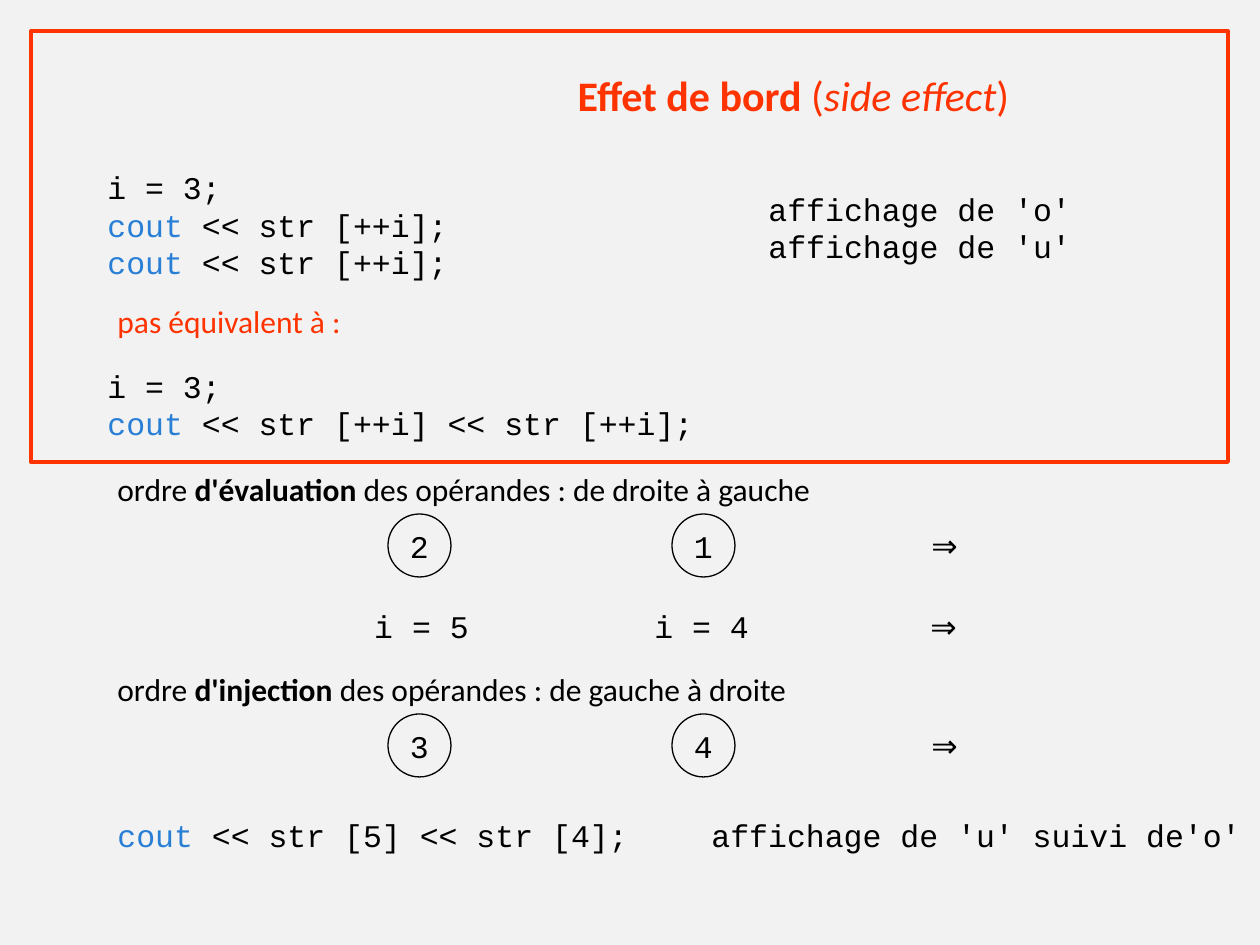
import pptx
import pptx.dml.color
import pptx.enum.shapes
import pptx.enum.text
import pptx.util

PX = 914400 / 126
BLACK = pptx.dml.color.RGBColor(0x00, 0x00, 0x00)
BLUE = pptx.dml.color.RGBColor(0x29, 0x7F, 0xD5)
RED = pptx.dml.color.RGBColor(0xFF, 0x33, 0x00)
PALE = pptx.dml.color.RGBColor(0xF2, 0xF2, 0xF2)
CODE = "Courier New"
PROSE = "Calibri"
LEFT = pptx.enum.text.PP_ALIGN.LEFT
CENTER = pptx.enum.text.PP_ALIGN.CENTER
SHAPES = pptx.enum.shapes.MSO_SHAPE

deck = pptx.Presentation()
deck.slide_width = round(1260 * PX)
deck.slide_height = round(945 * PX)
page = deck.slides.add_slide(deck.slide_layouts[6])
page.background.fill.solid()
page.background.fill.fore_color.rgb = PALE


def write(box, lines, font, align=LEFT, size=18):
    frame = box.text_frame
    frame.word_wrap = False
    frame.vertical_anchor = pptx.enum.text.MSO_ANCHOR.MIDDLE
    for number, line in enumerate(lines):
        para = frame.add_paragraph() if number else frame.paragraphs[0]
        para.alignment = align
        for text, color, style in line:
            span = para.add_run()
            span.text = text
            span.font.name = font
            span.font.size = pptx.util.Pt(size)
            span.font.color.rgb = color
            span.font.bold = style == "bold"
            span.font.italic = style == "italic"


def outline(kind, left, top, width, height, color, weight):
    shape = page.shapes.add_shape(kind, *(round(n * PX) for n in (left, top, width, height)))
    shape.shadow.inherit = False
    shape.fill.background()
    shape.line.color.rgb = color
    shape.line.width = pptx.util.Pt(weight)
    return shape


assign = [("i = 3;", BLACK, "")]
print_next = [("cout", BLUE, ""), (" << str [++i];", BLACK, "")]
print_both = [("cout", BLUE, ""), (" << str [++i] << str [++i];", BLACK, "")]
print_result = [("cout", BLUE, ""), (" << str [5] << str [4];", BLACK, "")]
evaluation = [("ordre ", BLACK, ""), ("d'évaluation", BLACK, "bold"),
              (" des opérandes : de droite à gauche", BLACK, "")]
injection = [("ordre ", BLACK, ""), ("d'injection", BLACK, "bold"),
             (" des opérandes : de gauche à droite", BLACK, "")]
title = [("Effet de bord", RED, "bold"), (" (", RED, ""),
         ("side effect", RED, "italic"), (")", RED, "")]
show_o = [("affichage de 'o'", BLACK, "")]
show_u = [("affichage de 'u'", BLACK, "")]
show_both = [("affichage de 'u' suivi de'o'", BLACK, "")]
arrow = [("⇒", BLACK, "")]

texts = [
    (554, 63, 479, 63, [title], PROSE, CENTER, 24),
    (95, 161, 387, 127, [assign, print_next, print_next], CODE, LEFT, 18),
    (756, 183, 331, 89, [show_o, show_u], CODE, LEFT, 18),
    (105, 296, 270, 50, [[("pas équivalent à :", RED, "")]], PROSE, LEFT, 18),
    (95, 360, 634, 89, [assign, print_both], CODE, LEFT, 18),
    (105, 464, 785, 50, [evaluation], PROSE, LEFT, 18),
    (916, 520, 57, 50, [arrow], PROSE, CENTER, 18),
    (361, 601, 121, 50, [[("i = 5", BLACK, "")]], CODE, CENTER, 18),
    (641, 601, 121, 50, [[("i = 4", BLACK, "")]], CODE, CENTER, 18),
    (915, 601, 57, 50, [arrow], PROSE, CENTER, 18),
    (105, 664, 760, 50, [injection], PROSE, LEFT, 18),
    (916, 720, 57, 50, [arrow], PROSE, CENTER, 18),
    (105, 810, 557, 50, [print_result], CODE, LEFT, 18),
    (699, 810, 559, 50, [show_both], CODE, LEFT, 18),
]
for left, top, width, height, lines, font, align, size in texts:
    box = page.shapes.add_textbox(*(round(n * PX) for n in (left, top, width, height)))
    box.text_frame.auto_size = pptx.enum.text.MSO_AUTO_SIZE.SHAPE_TO_FIT_TEXT
    write(box, lines, font, align, size)

for top, labels in ((514, "21"), (714, "34")):
    for left, label in zip((388, 672), labels):
        circle = outline(SHAPES.OVAL, left, top, 63, 63, BLACK, 0.75)
        write(circle, [[(label, BLACK, "")]], CODE, CENTER)

outline(SHAPES.RECTANGLE, 31, 31, 1197, 431, RED, 2.25)

deck.save("out.pptx")
